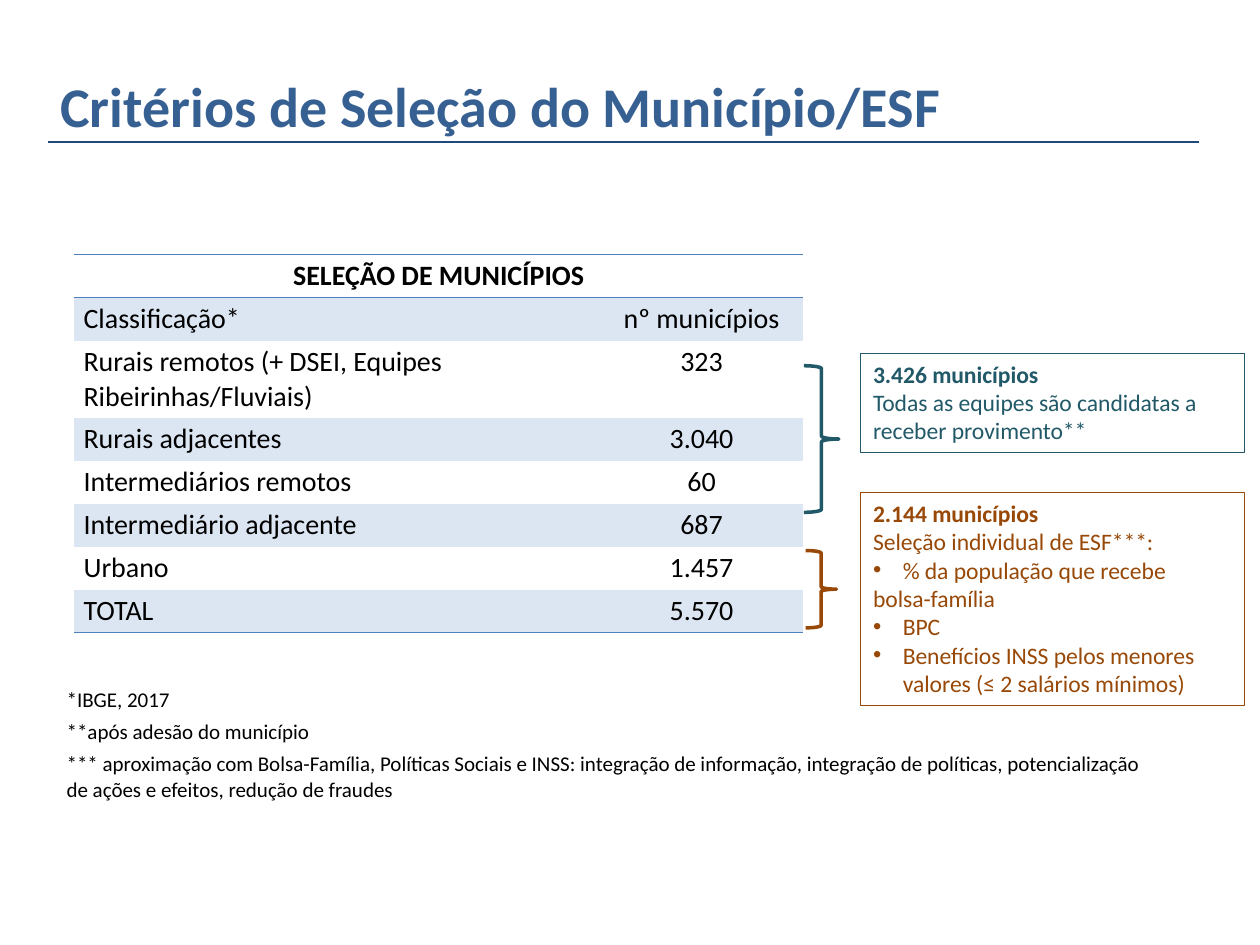
import pptx
import pptx.util
import pptx.dml.color
import pptx.enum.text
import pptx.enum.shapes
import pptx.oxml.ns
import lxml.etree

Pt = pptx.util.Pt
Align = pptx.enum.text.PP_ALIGN
Anchor = pptx.enum.text.MSO_ANCHOR
Shape = pptx.enum.shapes.MSO_SHAPE
Tag = pptx.oxml.ns.qn
theme = {
    "font": "Calibri",
    "title": {"size": 32, "color": "376092"},
    "cell": {"size": 16, "color": "000000"},
    "note": {"size": 12, "color": "000000"},
    "teal": {"size": 13.5, "color": "215968"},
    "brown": {"size": 13.5, "color": "984807"},
    "rule": "1F497D", "edge": "4F81BD", "band": "DCE6F2",
}


def color(key):
    return pptx.dml.color.RGBColor.from_string(key)


def write(frame, lines, style, bold=False, align=Align.LEFT):
    frame.word_wrap = True
    for i, line in enumerate(lines):
        para = frame.paragraphs[0] if i == 0 else frame.add_paragraph()
        para.alignment = align
        if line.startswith("• "):
            line = line[2:]
            props = para._p.get_or_add_pPr()
            props.set("marL", str(Pt(17)))
            props.set("indent", str(-Pt(17)))
            mark = lxml.etree.SubElement(props, Tag("a:buFont"))
            mark.set("typeface", "Arial")
            lxml.etree.SubElement(props, Tag("a:buChar")).set("char", "•")
        run = para.add_run()
        run.text = line
        look = {"name": theme["font"], "size": Pt(style["size"]), "bold": bold and i == 0}
        for key, value in look.items():
            setattr(run.font, key, value)
        run.font.color.rgb = color(style["color"])


deck = pptx.Presentation()
deck.slide_width, deck.slide_height = Pt(720), Pt(540)
slide = deck.slides.add_slide(deck.slide_layouts[6])
shapes = slide.shapes

title = shapes.add_textbox(Pt(27.4), Pt(23), Pt(620.6), Pt(78.5)).text_frame
write(title, ["Critérios de Seleção do Município/ESF"], theme["title"], True)
title.vertical_anchor = Anchor.MIDDLE
title.paragraphs[0].line_spacing = 0.9

rule = shapes.add_connector(
    pptx.enum.shapes.MSO_CONNECTOR.STRAIGHT, Pt(27.4), Pt(81.2), Pt(685.4), Pt(81.2))
rule.line.color.rgb = color(theme["rule"])
rule.line.width = Pt(1)
lxml.etree.SubElement(rule._element.spPr, Tag("a:effectLst"))

rows = [
    ("SELEÇÃO DE MUNICÍPIOS", ""),
    ("Classificação*", "nº municípios"),
    ("Rurais remotos (+ DSEI, Equipes Ribeirinhas/Fluviais)", "323"),
    ("Rurais adjacentes", "3.040"),
    ("Intermediários remotos", "60"),
    ("Intermediário adjacente", "687"),
    ("Urbano", "1.457"),
    ("TOTAL", "5.570"),
]
last = len(rows) - 1
table = shapes.add_table(len(rows), 2, Pt(42.4), Pt(145.5), Pt(416.6), Pt(216.2)).table
table.first_row = table.horz_banding = False
table._tbl.tblPr.find(Tag("a:tableStyleId")).text = "{2D5ABB26-0587-4C30-8999-92F81FD0307C}"
for col, width in zip(table.columns, (300.4, 116.2)):
    col.width = Pt(width)
table.cell(0, 0).merge(table.cell(0, 1))
inset = {"margin_left": 5.4, "margin_right": 5.4, "margin_top": 2.6, "margin_bottom": 2.6}
for r, row in enumerate(rows):
    table.rows[r].height = Pt(44 if r == 2 else 24.6)
    sides = {0: ["lnT", "lnB"], last: ["lnB"]}.get(r, [])
    for c, words in enumerate(row):
        cell = table.cell(r, c)
        for key, value in inset.items():
            setattr(cell, key, Pt(value))
        for side in sides:
            line = lxml.etree.SubElement(cell._tc.get_or_add_tcPr(), Tag("a:" + side))
            line.set("w", str(Pt(1)))
            paint = lxml.etree.SubElement(line, Tag("a:solidFill"))
            lxml.etree.SubElement(paint, Tag("a:srgbClr")).set("val", theme["edge"])
        if r % 2:
            cell.fill.solid()
            cell.fill.fore_color.rgb = color(theme["band"])
        else:
            cell.fill.background()
        if words:
            align = Align.CENTER if c or r == 0 else Align.LEFT
            write(cell.text_frame, [words], theme["cell"], r == 0, align)

groups = [
    ("teal", (459.4, 209, 20, 83.8), (491.8, 202, 219.3, 56.5), [
        "3.426 municípios",
        "Todas as equipes são candidatas a receber provimento**",
    ]),
    ("brown", (460.4, 314.6, 17.6, 44.2), (491.8, 281.5, 219.3, 121.8), [
        "2.144 municípios",
        "Seleção individual de ESF***:",
        "• % da população que recebe",
        "bolsa-família",
        "• BPC",
        "• Benefícios INSS pelos menores valores (≤ 2 salários mínimos)",
    ]),
]
for name, brace, box, lines in groups:
    for kind, spot, width in ((Shape.RIGHT_BRACE, brace, 2), (Shape.RECTANGLE, box, 0.75)):
        item = shapes.add_shape(kind, *map(Pt, spot))
        item.shadow.inherit = False
        item.fill.background()
        item.line.color.rgb = color(theme[name]["color"])
        item.line.width = Pt(width)
    item.text_frame.vertical_anchor = Anchor.TOP
    write(item.text_frame, lines, theme[name], True)

notes = [
    ("*IBGE, 2017", 200, 21.8),
    ("**após adesão do município", 200, 21.8),
    ("*** aproximação com Bolsa-Família, Políticas Sociais e INSS: integração de informação, "
     "integração de políticas, potencialização de ações e efeitos, redução de fraudes", 635.8, 36.3),
]
for i, (words, width, height) in enumerate(notes):
    note = shapes.add_textbox(Pt(31), Pt(389 + 18.3 * i), Pt(width), Pt(height))
    write(note.text_frame, [words], theme["note"])

deck.save("out.pptx")
